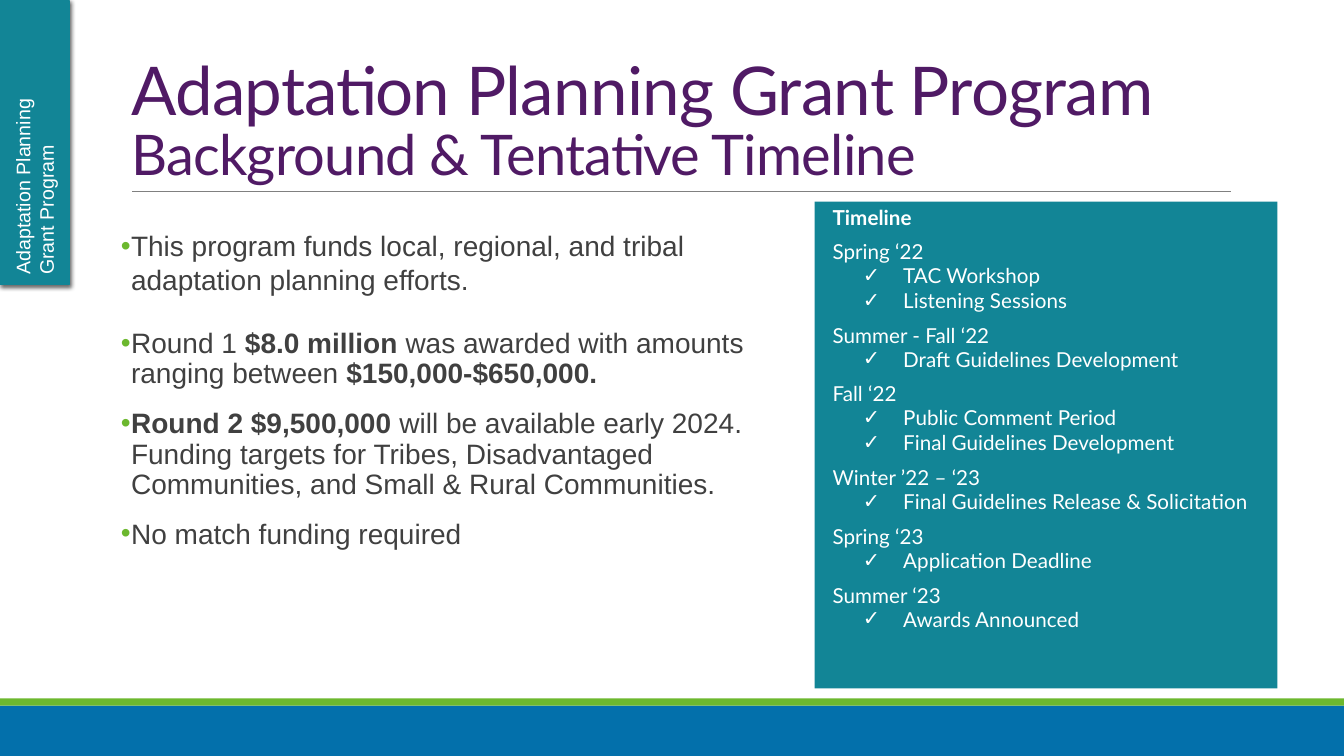
import pptx
import pptx.util
import pptx.dml.color
import pptx.enum.shapes
import pptx.enum.text
import pptx.oxml
import pptx.oxml.ns
from dataclasses import dataclass
from lxml import etree

Inches, Pt = pptx.util.Inches, pptx.util.Pt
RGB = pptx.dml.color.RGBColor.from_string
ANCHOR = pptx.enum.text.MSO_ANCHOR
ALIGN = pptx.enum.text.PP_ALIGN
RECTANGLE = pptx.enum.shapes.MSO_SHAPE.RECTANGLE
qn = pptx.oxml.ns.qn


@dataclass(frozen=True)
class Theme:
    blue: str = "0370AB"
    green: str = "6CB82E"
    teal: str = "128596"
    purple: str = "501A65"
    text: str = "404040"
    rule: str = "808080"
    white: str = "FFFFFF"
    heading_font: str = "Lato"
    body_font: str = "Arial"
    title_size: float = 48
    subtitle_size: float = 40
    body_size: float = 20
    timeline_size: float = 14.7
    tab_size: float = 14


theme = Theme()


def add_run(paragraph, text, font, size, color, bold=False):
    run = paragraph.add_run()
    run.text = text
    run.font.name = font
    run.font.size = Pt(size)
    run.font.bold = bold
    run.font.color.rgb = RGB(color)
    return run


def set_bullet(paragraph, mark, color, margin, indent):
    properties = paragraph._p.get_or_add_pPr()
    properties.set("marL", str(Inches(margin)))
    properties.set("indent", str(Inches(indent)))
    bullet_color = etree.SubElement(properties, qn("a:buClr"))
    etree.SubElement(bullet_color, qn("a:srgbClr"), val=color)
    etree.SubElement(properties, qn("a:buFont"), typeface="Arial")
    etree.SubElement(properties, qn("a:buChar"), char=mark)


presentation = pptx.Presentation()
presentation.slide_width = Inches(13.33)
presentation.slide_height = Inches(7.5)
slide = presentation.slides.add_slide(presentation.slide_layouts[5])

# Flat blocks: footer bands, timeline panel and side tab
blocks = [
    (0, 7, 13.33, 0.5, theme.blue),
    (0, 6.93, 13.33, 0.07, theme.green),
    (8.08, 2, 4.59, 4.83, theme.teal),
    (-1.07, 1.07, 2.82, 0.69, theme.teal),
]
for left, top, width, height, color in blocks:
    block = slide.shapes.add_shape(
        RECTANGLE, Inches(left), Inches(top), Inches(width), Inches(height))
    block.shadow.inherit = False
    block.fill.solid()
    block.fill.fore_color.rgb = RGB(color)
    block.line.fill.background()

# Side tab: the last block, turned and given its label and shadow
side_tab = block
side_tab.rotation = 270
side_tab.line.color.rgb = RGB(theme.teal)
side_tab.line.width = Pt(1)
effects = side_tab._element.spPr.find(qn("a:effectLst"))
shadow = etree.SubElement(
    effects, qn("a:outerShdw"), blurRad=str(Pt(3)), dist=str(Pt(2)),
    dir=str(45 * 60000), algn="tl", rotWithShape="0")
shadow_color = etree.SubElement(shadow, qn("a:srgbClr"), val="000000")
etree.SubElement(shadow_color, qn("a:alpha"), val="60000")
tab_frame = side_tab.text_frame
tab_frame.vertical_anchor = ANCHOR.MIDDLE
for index, label in enumerate(["Adaptation Planning", "Grant Program"]):
    line = tab_frame.add_paragraph() if index else tab_frame.paragraphs[0]
    line.alignment = ALIGN.LEFT
    add_run(line, label, theme.body_font, theme.tab_size, theme.white)

# Title and the rule under it
title = slide.shapes.title
title.left, title.top = Inches(1.2), Inches(0.31)
title.width, title.height = Inches(11), Inches(1.59)
title.text_frame.auto_size = pptx.enum.text.MSO_AUTO_SIZE.NONE
title.text_frame.word_wrap = True
title.text_frame.vertical_anchor = ANCHOR.BOTTOM
heading = title.text_frame.paragraphs[0]
heading.alignment = ALIGN.LEFT
heading.line_spacing = 0.85
for text, size in [("Adaptation Planning Grant Program ", theme.title_size),
                   ("Background & Tentative Timeline", theme.subtitle_size)]:
    run = add_run(heading, text, theme.heading_font, size, theme.purple)
    run._r.get_or_add_rPr().set("spc", "-50")

title_rule = slide.shapes.add_connector(
    pptx.enum.shapes.MSO_CONNECTOR.STRAIGHT,
    Inches(1.31), Inches(1.9), Inches(12.21), Inches(1.9))
title_rule.line.color.rgb = RGB(theme.rule)
title_rule.line.width = Pt(0.5)
etree.SubElement(title_rule._element.spPr, qn("a:effectLst"))

# Background points, each a list of (text, bold) runs
points = [
    [("This program funds local, regional, and tribal adaptation planning efforts.", False)],
    [("Round 1 ", False), ("$8.0 million", True),
     (" was awarded with amounts ranging between ", False),
     ("$150,000-$650,000.", True)],
    [("Round 2 $9,500,000 ", True),
     ("will be available early 2024. Funding targets for Tribes, "
      "Disadvantaged Communities, and Small & Rural Communities.", False)],
    [("No match funding required", False)],
]
background = slide.shapes.add_textbox(
    Inches(1.2), Inches(2.22), Inches(6.84), Inches(4.4)).text_frame
background.word_wrap = True
background.margin_left = background.margin_right = 0
for index, runs in enumerate(points):
    point = background.add_paragraph() if index else background.paragraphs[0]
    point.line_spacing = 0.9 if index else 1.0
    point.space_before = Pt(12)
    point.space_after = Pt(2 if index else 12)
    set_bullet(point, "•", theme.green, 0.1, -0.1)
    for text, bold in runs:
        add_run(point, text, theme.body_font, theme.body_size, theme.text, bold)

# Timeline: a heading, then periods with their steps
schedule = [
    ("Spring ‘22", ["TAC Workshop", "Listening Sessions"]),
    ("Summer - Fall ‘22", ["Draft Guidelines Development"]),
    ("Fall ‘22", ["Public Comment Period", "Final Guidelines Development"]),
    ("Winter ’22 – ‘23", ["Final Guidelines Release & Solicitation"]),
    ("Spring ‘23", ["Application Deadline"]),
    ("Summer ‘23", ["Awards Announced"]),
]
timeline = slide.shapes.add_textbox(
    Inches(8.16), Inches(2.05), Inches(4.39), Inches(4.73)).text_frame
timeline.word_wrap = True
timeline_style = (theme.heading_font, theme.timeline_size, theme.white)
timeline_heading = timeline.paragraphs[0]
timeline_heading.line_spacing = 0.7
timeline_heading.space_after = Pt(6)
add_run(timeline_heading, "Timeline", *timeline_style, bold=True)
for index, (period, steps) in enumerate(schedule):
    period_line = timeline.add_paragraph()
    period_line.line_spacing = 0.7
    period_line.space_before = Pt(12 if index else 6)
    add_run(period_line, period, *timeline_style)
    for step in steps:
        step_line = timeline.add_paragraph()
        set_bullet(step_line, "✓", theme.white, 0.7, -0.4)
        add_run(step_line, step, *timeline_style)

presentation.save("out.pptx")
